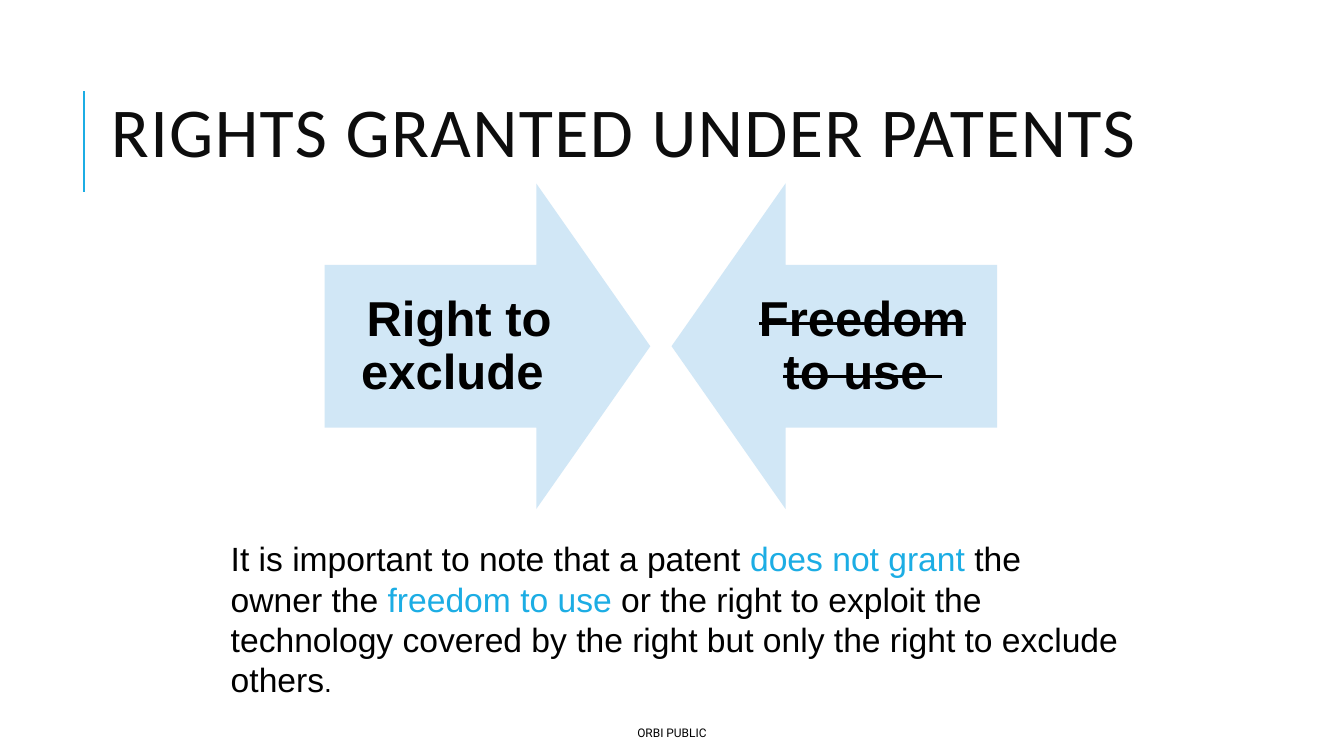
from pptx import Presentation
from pptx.dml.color import RGBColor
from pptx.enum.shapes import MSO_CONNECTOR, MSO_SHAPE
from pptx.enum.text import MSO_ANCHOR, MSO_AUTO_SIZE, PP_ALIGN
from pptx.oxml.ns import qn
from pptx.util import Inches, Pt
from lxml import etree
from dataclasses import dataclass

TITLE = "RIGHTS GRANTED UNDER PATENTS"
FOOTER = "ORBI PUBLIC"
ARROWS = [
    {"text": "Right to exclude ", "left": 3.22, "rotation": 270, "label_left": 3.22, "struck": False},
    {"text": "Freedom to use ", "left": 6.66, "rotation": 90, "label_left": 7.22, "struck": True},
]
NOTE = [
    ("It is important to note that a patent ", False),
    ("does not grant ", True),
    ("the owner the ", False),
    ("freedom to use ", True),
    ("or the right to exploit the technology covered by the right but only the right to exclude others", False),
    (".", False),
]


@dataclass(frozen=True)
class Theme:
    accent: str = "1CADE4"
    arrow: str = "D1E7F6"
    title: str = "0D0D0D"
    text: str = "000000"
    title_font: str = "Calibri"
    body_font: str = "Arial"
    footer_font: str = "Roboto"
    title_size: float = 50
    label_size: float = 35
    note_size: float = 24
    stop_size: float = 20
    footer_size: float = 8.5


THEME = Theme()
ARROW_TOP, ARROW_SIDE = 1.82, 3.23
LABEL_TOP, LABEL_WIDTH, LABEL_HEIGHT, LABEL_INSET = 2.63, 2.67, 1.62, 0.27


def style(run, font, size, color, bold=False):
    run.font.name = font
    run.font.size = Pt(size)
    run.font.bold = bold
    run.font.color.rgb = RGBColor.from_string(color)


def add_text(slide, left, top, width, height):
    shape = slide.shapes.add_textbox(Inches(left), Inches(top), Inches(width), Inches(height))
    shape.text_frame.word_wrap = True
    return shape.text_frame


def add_title(slide):
    title = slide.shapes.title
    title.left, title.top, title.width, title.height = (Inches(v) for v in (1, 0.98, 12, 0.77))
    frame = title.text_frame
    frame.text = TITLE
    frame.word_wrap = True
    frame.auto_size = MSO_AUTO_SIZE.NONE
    frame.vertical_anchor = MSO_ANCHOR.MIDDLE
    paragraph = frame.paragraphs[0]
    paragraph.alignment = PP_ALIGN.LEFT
    paragraph.line_spacing = 0.8
    run = paragraph.runs[0]
    style(run, THEME.title_font, THEME.title_size, THEME.title)
    run.font._element.set("spc", "100")


def add_rule(slide):
    rule = slide.shapes.add_connector(
        MSO_CONNECTOR.STRAIGHT, Inches(0.83), Inches(1.9), Inches(0.83), Inches(0.9))
    rule.line.color.rgb = RGBColor.from_string(THEME.accent)
    rule.line.width = Pt(1.5)
    etree.SubElement(rule._element.spPr, qn("a:effectLst"))


def add_footer(slide):
    frame = add_text(slide, 0, 7.15, 13.33, 0.24)
    frame.text = FOOTER
    paragraph = frame.paragraphs[0]
    paragraph.alignment = PP_ALIGN.CENTER
    style(paragraph.runs[0], THEME.footer_font, THEME.footer_size, THEME.text)


def add_note(slide):
    paragraph = add_text(slide, 2.19, 5.29, 9.02, 1.72).paragraphs[0]
    for text, highlighted in NOTE:
        run = paragraph.add_run()
        run.text = text
        size = THEME.stop_size if text == "." else THEME.note_size
        style(run, THEME.body_font, size, THEME.accent if highlighted else THEME.text)


def add_arrow(slide, arrow):
    shape = slide.shapes.add_shape(
        MSO_SHAPE.DOWN_ARROW, Inches(arrow["left"]), Inches(ARROW_TOP),
        Inches(ARROW_SIDE), Inches(ARROW_SIDE))
    shape.rotation = arrow["rotation"]
    shape.adjustments[0], shape.adjustments[1] = 0.5, 0.35
    shape.shadow.inherit = False
    shape.fill.solid()
    shape.fill.fore_color.rgb = RGBColor.from_string(THEME.arrow)
    shape.line.fill.background()

    frame = add_text(slide, arrow["label_left"], LABEL_TOP, LABEL_WIDTH, LABEL_HEIGHT)
    frame.text = arrow["text"]
    frame.vertical_anchor = MSO_ANCHOR.MIDDLE
    frame.margin_left = frame.margin_right = Inches(LABEL_INSET)
    frame.margin_top = frame.margin_bottom = Inches(LABEL_INSET)
    paragraph = frame.paragraphs[0]
    paragraph.alignment = PP_ALIGN.CENTER
    paragraph.line_spacing = 0.9
    run = paragraph.runs[0]
    style(run, THEME.body_font, THEME.label_size, THEME.text, bold=True)
    if arrow["struck"]:
        run.font._element.set("strike", "sngStrike")


def main():
    presentation = Presentation()
    presentation.slide_width = Inches(13.33)
    presentation.slide_height = Inches(7.5)
    slide = presentation.slides.add_slide(presentation.slide_layouts[5])
    add_rule(slide)
    add_footer(slide)
    add_title(slide)
    add_note(slide)
    for arrow in ARROWS:
        add_arrow(slide, arrow)
    presentation.save("out.pptx")


if __name__ == "__main__":
    main()
